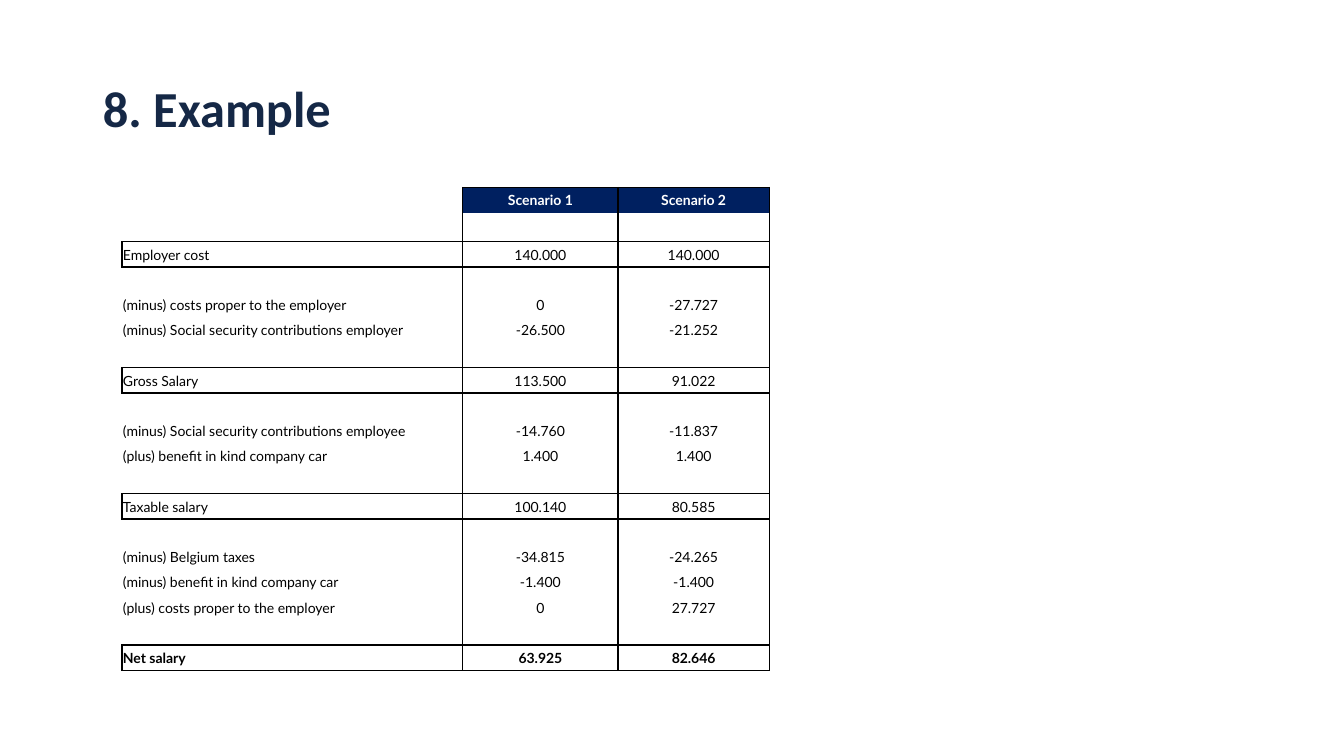
from lxml import etree
from pptx import Presentation
from pptx.dml.color import RGBColor
from pptx.enum.text import MSO_ANCHOR, PP_ALIGN
from pptx.oxml.ns import qn
from pptx.util import Inches, Pt

MIDDLE = MSO_ANCHOR.MIDDLE
LEFT, CENTER = PP_ALIGN.LEFT, PP_ALIGN.CENTER

TITLE_BLUE = RGBColor(0x15, 0x28, 0x46)
HEADER_NAVY = RGBColor(0x00, 0x20, 0x60)
WHITE = RGBColor(0xFF, 0xFF, 0xFF)
BLACK = RGBColor(0x00, 0x00, 0x00)

TITLE_ONLY_LAYOUT = 5
COLUMN_WIDTHS = (3.38, 1.54, 1.5)
ROW_HEIGHT = 0.25
FIRST_GAP_HEIGHT = 0.29
GAP = ("", "", "")

SALARY_ROWS = [
    ("", "Scenario 1", "Scenario 2"),
    GAP,
    ("Employer cost", "140.000", "140.000"),
    GAP,
    ("(minus) costs proper to the employer", "0", "-27.727"),
    ("(minus) Social security contributions employer", "-26.500", "-21.252"),
    GAP,
    ("Gross Salary", "113.500", "91.022"),
    GAP,
    ("(minus) Social security contributions employee", "-14.760", "-11.837"),
    ("(plus) benefit in kind company car", "1.400", "1.400"),
    GAP,
    ("Taxable salary", "100.140", "80.585"),
    GAP,
    ("(minus) Belgium taxes", "-34.815", "-24.265"),
    ("(minus) benefit in kind company car", "-1.400", "-1.400"),
    ("(plus) costs proper to the employer", "0", "27.727"),
    GAP,
    ("Net salary", "63.925", "82.646"),
]
BOXED_LABELS = {"Employer cost", "Gross Salary", "Taxable salary", "Net salary"}


def write_text(frame, text, font="Lato", size=10, color=BLACK, bold=False, align=LEFT):
    para = frame.paragraphs[0]
    para.alignment = align
    if not text:
        # An empty cell keeps the small size so that its row does not grow
        end = etree.SubElement(para._p, qn("a:endParaRPr"))
        end.set("sz", str(size * 100))
        return
    span = para.add_run()
    span.text = text
    span.font.name = font
    span.font.size = Pt(size)
    span.font.bold = bold
    span.font.color.rgb = color


def set_borders(cell, **sides):
    properties = cell._tc.get_or_add_tcPr()
    for side in ("L", "R", "T", "B"):
        line = etree.SubElement(properties, qn("a:ln" + side), w=str(Pt(1)))
        if sides[side]:
            fill = etree.SubElement(line, qn("a:solidFill"))
            etree.SubElement(fill, qn("a:srgbClr"), val=str(BLACK))
        else:
            etree.SubElement(line, qn("a:noFill"))


def is_boxed(row):
    return 0 <= row < len(SALARY_ROWS) and SALARY_ROWS[row][0] in BOXED_LABELS


def format_cell(cell, text, row, column):
    is_header = row == 0 and column > 0
    cell.vertical_anchor = MIDDLE
    cell.margin_left = cell.margin_right = cell.margin_top = Inches(0.01)
    cell.margin_bottom = 0
    set_borders(
        cell,
        L=column > 0 or is_boxed(row),
        R=True,
        T=is_header or is_boxed(row) or is_boxed(row - 1),
        B=is_boxed(row) or is_boxed(row + 1),
    )
    if is_header:
        cell.fill.solid()
        cell.fill.fore_color.rgb = HEADER_NAVY
    else:
        cell.fill.background()
    write_text(
        cell.text_frame,
        text,
        color=WHITE if is_header else BLACK,
        bold=is_header or row == len(SALARY_ROWS) - 1,
        align=CENTER if column else LEFT,
    )


def add_title(page, text):
    title = page.shapes.title
    title.left, title.top = Inches(0.92), Inches(0.76)
    title.width, title.height = Inches(11.5), Inches(0.69)
    title.text_frame.vertical_anchor = MIDDLE
    write_text(title.text_frame, text, font="Calibri", size=36, color=TITLE_BLUE, bold=True)
    title.text_frame.paragraphs[0].line_spacing = 0.9


def add_salary_table(page):
    heights = [ROW_HEIGHT] * len(SALARY_ROWS)
    heights[1] = FIRST_GAP_HEIGHT
    table = page.shapes.add_table(
        len(SALARY_ROWS), len(COLUMN_WIDTHS), Inches(1.21), Inches(1.86),
        Inches(sum(COLUMN_WIDTHS)), Inches(sum(heights)),
    ).table
    table.first_row = table.horz_banding = False
    for column, width in zip(table.columns, COLUMN_WIDTHS):
        column.width = Inches(width)
    for row, height in zip(table.rows, heights):
        row.height = Inches(height)
    for row, texts in enumerate(SALARY_ROWS):
        for column, text in enumerate(texts):
            format_cell(table.cell(row, column), text, row, column)


def main():
    deck = Presentation()
    deck.slide_width, deck.slide_height = Inches(13.33), Inches(7.5)
    page = deck.slides.add_slide(deck.slide_layouts[TITLE_ONLY_LAYOUT])
    add_title(page, "8. Example")
    add_salary_table(page)
    deck.save("out.pptx")


if __name__ == "__main__":
    main()
